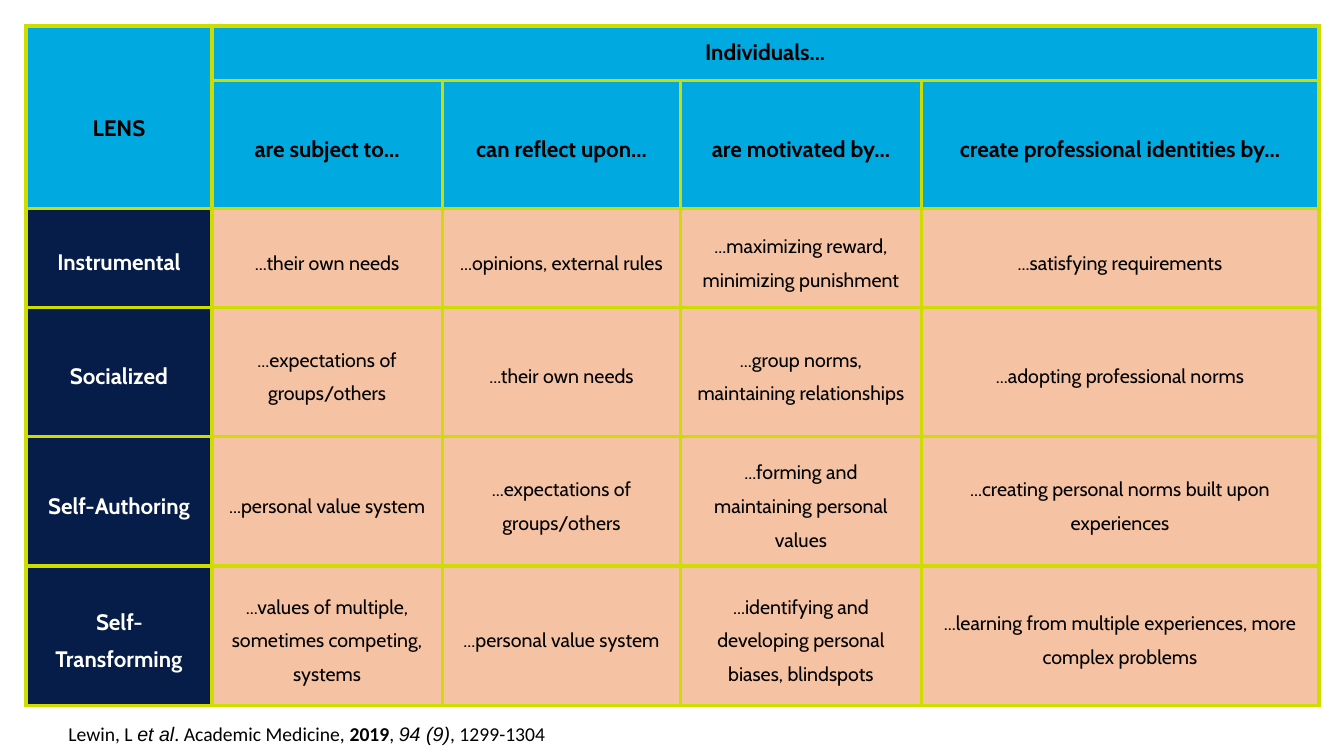
"""Build a slide with a table of the lenses of professional identity."""
from lxml.etree import SubElement, Element
from pptx import Presentation
from pptx.dml.color import RGBColor
from pptx.enum.text import MSO_ANCHOR as Anchor, MSO_AUTO_SIZE as AutoSize, PP_ALIGN as Align
from pptx.oxml.ns import qn
from pptx.util import Inches, Pt

BLUE, NAVY, PEACH, LIME = "00A9E0", "071D49", "F5C2A3", "CEDC00"
BLACK, WHITE = "000000", "FFFFFF"

COLUMN_WIDTHS = [1.84, 2.29, 2.36, 2.39, 3.94]
ROW_HEIGHTS = [0.54, 1.27, 0.98, 1.28, 1.28, 1.38]
QUESTIONS = ["are subject to...", "can reflect upon...", "are motivated by...",
             "create professional identities by..."]
LENSES = {
    "Instrumental": [
        "...their own needs",
        "...opinions, external rules",
        "...maximizing reward, minimizing punishment",
        "...satisfying requirements"],
    "Socialized": [
        "...expectations of groups/others",
        "...their own needs",
        "...group norms, maintaining relationships",
        "...adopting professional norms"],
    "Self-Authoring": [
        "...personal value system",
        "...expectations of groups/others",
        "...forming and maintaining personal values",
        "...creating personal norms built upon experiences"],
    "Self-Transforming": [
        "...values of multiple, sometimes competing, systems",
        "...personal value system",
        "...identifying and developing personal biases, blindspots",
        "...learning from multiple experiences, more complex problems"],
}
CITATION = [("Lewin, L ", {}), ("et al", {"font": "Arial", "italic": True}),
            (". Academic Medicine, ", {}), ("2019", {"bold": True}), (", ", {}),
            ("94 (9)", {"font": "Arial", "italic": True}), (", 1299-1304 ", {})]


def color(value):
    return RGBColor.from_string(value)


class SlideBuilder:
    """Hold the table style and the current slide."""

    margin = Inches(0.14)
    border_width = Pt(3)

    def __init__(self, slide):
        self.slide = slide

    def run(self, paragraph, text, size, font, ink=BLACK, bold=False, italic=False):
        run = paragraph.add_run()
        run.text = text
        run.font.name, run.font.size = font, Pt(size)
        run.font.bold, run.font.italic = bold, italic
        run.font.color.rgb = color(ink)

    def borders(self, cell):
        properties = cell._tc.get_or_add_tcPr()
        for index, side in enumerate(["lnL", "lnR", "lnT", "lnB"]):
            line = Element(qn(f"a:{side}"), w=str(self.border_width))
            fill = SubElement(line, qn("a:solidFill"))
            SubElement(fill, qn("a:srgbClr"), val=LIME)
            properties.insert(index, line)

    def cell(self, cell, text, fill, spacing=26.4, size=16, ink=BLACK, bold=True,
             anchor=Anchor.MIDDLE):
        cell.margin_left = cell.margin_right = self.margin
        cell.margin_top = cell.margin_bottom = self.margin
        cell.vertical_anchor = anchor
        cell.fill.solid()
        cell.fill.fore_color.rgb = color(fill)
        paragraph = cell.text_frame.paragraphs[0]
        paragraph.alignment = Align.CENTER
        paragraph.line_spacing = Pt(spacing)
        self.run(paragraph, text, size, "Cabin", ink, bold)

    def table(self, left, top, widths, heights):
        frame = self.slide.shapes.add_table(
            len(heights), len(widths), Inches(left), Inches(top),
            Inches(sum(widths)), Inches(sum(heights)))
        table = frame.table
        table.first_row = table.horz_banding = False
        for column, width in zip(table.columns, widths):
            column.width = Inches(width)
        for row, height in zip(table.rows, heights):
            row.height = Inches(height)
        for cell in table.iter_cells():
            self.borders(cell)
        return table

    def text(self, left, top, width, height, runs, spacing):
        box = self.slide.shapes.add_textbox(
            Inches(left), Inches(top), Inches(width), Inches(height))
        frame = box.text_frame
        frame.word_wrap = True
        frame.auto_size = AutoSize.SHAPE_TO_FIT_TEXT
        frame.margin_left = frame.margin_right = frame.margin_top = frame.margin_bottom = 0
        paragraph = frame.paragraphs[0]
        paragraph.alignment = Align.CENTER
        paragraph.line_spacing = Pt(spacing)
        for text, style in runs:
            self.run(paragraph, text, **{"size": 14, "font": "Calibri", **style})


def main():
    presentation = Presentation()
    presentation.slide_width, presentation.slide_height = Inches(13.33), Inches(7.5)
    builder = SlideBuilder(presentation.slides.add_slide(presentation.slide_layouts[6]))

    table = builder.table(0.26, 0.26, COLUMN_WIDTHS, ROW_HEIGHTS)
    table.cell(0, 0).merge(table.cell(1, 0))
    table.cell(0, 1).merge(table.cell(0, 4))
    builder.cell(table.cell(0, 0), "LENS", BLUE, spacing=35.2)
    builder.cell(table.cell(0, 1), "Individuals...", BLUE, spacing=17.6, anchor=Anchor.BOTTOM)
    for column, question in enumerate(QUESTIONS, 1):
        builder.cell(table.cell(1, column), question, BLUE)
    for row, (lens, answers) in enumerate(LENSES.items(), 2):
        builder.cell(table.cell(row, 0), lens, NAVY, ink=WHITE)
        for column, answer in enumerate(answers, 1):
            builder.cell(table.cell(row, column), answer, PEACH, spacing=24.2, size=14, bold=False)

    builder.text(0.41, 7.16, 5.31, 0.23, CITATION, spacing=17.3)
    presentation.save("out.pptx")


if __name__ == "__main__":
    main()
